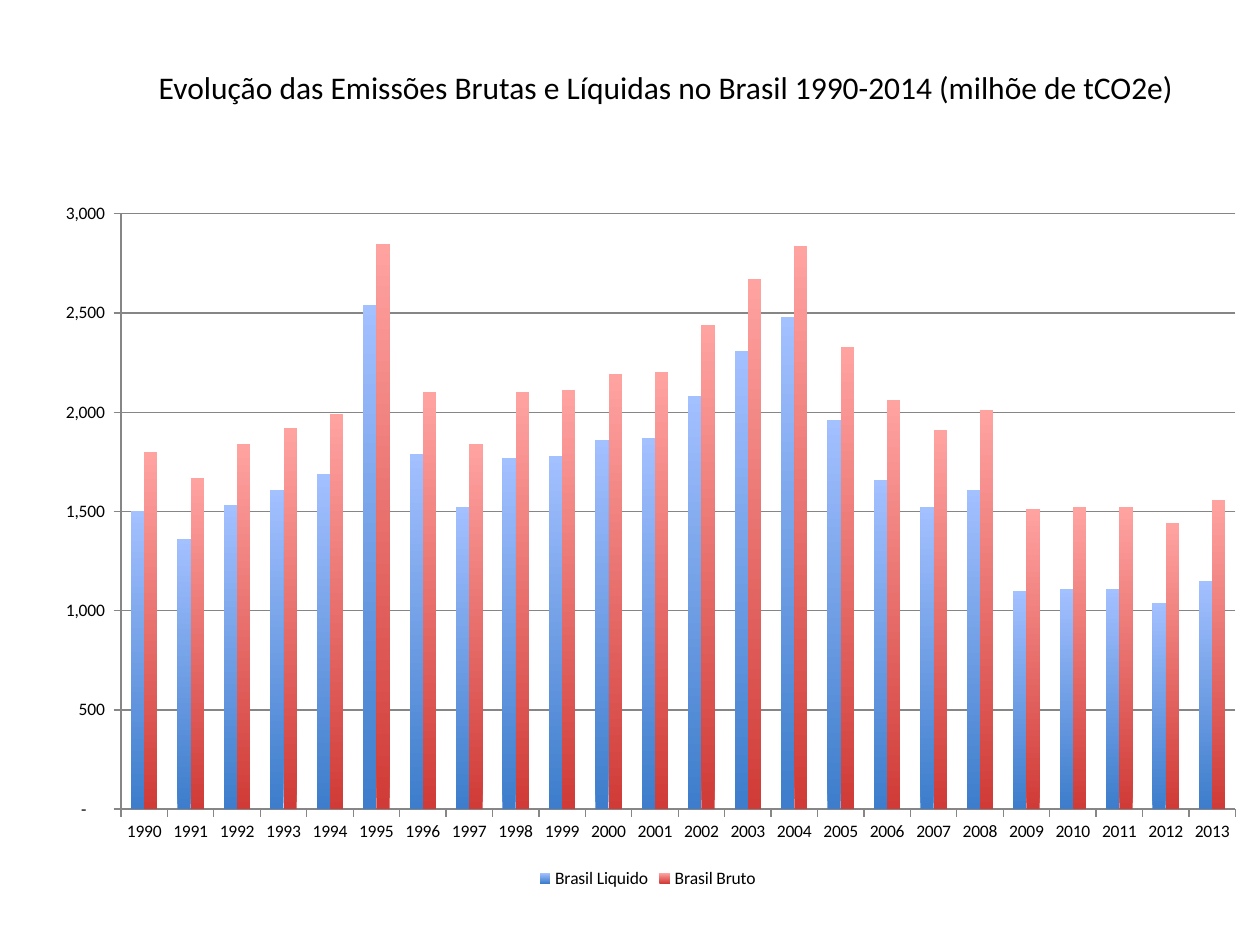
from lxml import etree
from pptx import Presentation
from pptx.chart.data import CategoryChartData
from pptx.dml.color import RGBColor
from pptx.enum.chart import XL_CHART_TYPE, XL_LEGEND_POSITION, XL_TICK_MARK
from pptx.enum.text import MSO_ANCHOR, MSO_AUTO_SIZE, PP_ALIGN
from pptx.util import Inches, Pt

COLUMN = XL_CHART_TYPE.COLUMN_CLUSTERED
BOTTOM = XL_LEGEND_POSITION.BOTTOM
OUTSIDE = XL_TICK_MARK.OUTSIDE
TOP = MSO_ANCHOR.TOP
LEFT = PP_ALIGN.LEFT
NO_FIT = MSO_AUTO_SIZE.NONE

THEME = {
    "font": "Calibri",
    "title": 18,
    "label": 10,
    "text": RGBColor.from_string("000000"),
    "grid": RGBColor.from_string("868686"),
    # Each bar fades from its foot to its top
    "fades": [("3D7DCB", "A3C0FF"), ("D03B37", "FFA3A1")],
}

YEARS = range(1990, 2014)
NET = [1500, 1360, 1530, 1610, 1690, 2540, 1790, 1520, 1770, 1780, 1860, 1870,
       2080, 2310, 2480, 1960, 1660, 1520, 1610, 1100, 1110, 1110, 1040, 1150]
GROSS = [1800, 1670, 1840, 1920, 1990, 2850, 2100, 1840, 2100, 2110, 2190, 2200,
         2440, 2670, 2840, 2330, 2060, 1910, 2010, 1510, 1520, 1520, 1440, 1560]


def style(font, size):
    font.name = THEME["font"]
    font.size = Pt(size)
    font.bold = False
    font.color.rgb = THEME["text"]


def write(frame, text, size, align=LEFT, anchor=TOP, wrap=False):
    frame.auto_size = NO_FIT
    frame.word_wrap = wrap
    frame.vertical_anchor = anchor
    para = frame.paragraphs[0]
    para.alignment = align
    run = para.add_run()
    run.text = text
    style(run.font, size)


deck = Presentation()
deck.slide_width, deck.slide_height = Inches(10), Inches(7.5)
slide = deck.slides.add_slide(deck.slide_layouts[5])

# Title
title = slide.shapes.title
title.left, title.top = Inches(1.16), Inches(0.49)
title.width, title.height = Inches(8.36), Inches(0.71)
write(title.text_frame,
      "Evolução das Emissões Brutas e Líquidas no Brasil 1990-2014 (milhõe de tCO2e)",
      THEME["title"])

# Chart
data = CategoryChartData(number_format="#,##0")
data.categories = [str(year) for year in YEARS]
data.add_series("Brasil Liquido", NET)
data.add_series("Brasil Bruto", GROSS)
chart = slide.shapes.add_chart(
    COLUMN, Inches(0.28), Inches(1.53), Inches(9.72), Inches(5.56), data).chart
style(chart.font, THEME["label"])
chart.has_title = False
chart.has_legend = True
chart.legend.position = BOTTOM
chart.legend.include_in_layout = False

# Bars
plot = chart.plots[0]
plot.gap_width = 150
plot.overlap = 0
plot.vary_by_categories = False
for bars, fade in zip(plot.series, THEME["fades"]):
    fill = bars.format.fill
    fill.gradient()
    fill.gradient_angle = 90
    for stop, color in zip(fill.gradient_stops, fade):
        stop.color.rgb = RGBColor.from_string(color)

# Axes and grid
scale = chart.value_axis
scale.minimum_scale, scale.maximum_scale, scale.major_unit = 0, 3000, 500
scale.has_major_gridlines = True
scale.tick_labels.number_format = '_-* #,##0_-;\\-* #,##0_-;_-* "-"??_-;_-@_'
scale.tick_labels.number_format_is_linked = False
for axis in (scale, chart.category_axis):
    axis.major_tick_mark = OUTSIDE
    style(axis.tick_labels.font, THEME["label"])
for part in (scale, chart.category_axis, scale.major_gridlines):
    part.format.line.color.rgb = THEME["grid"]
    part.format.line.width = Pt(0.75)

# Plot area, as shares of the chart frame
area = chart.category_axis.format.line  # keeps axis lines made before layout
space = chart.plots[0]._element.getparent()
for old in space.findall("{*}layout"):
    space.remove(old)
URI = etree.QName(space).namespace
layout = etree.Element(f"{{{URI}}}layout")
manual = etree.SubElement(layout, f"{{{URI}}}manualLayout")
for tag, value in [("layoutTarget", "inner"), ("xMode", "edge"), ("yMode", "edge"),
                   ("x", "0.07"), ("y", "0.03"), ("w", "0.91"), ("h", "0.85")]:
    etree.SubElement(manual, f"{{{URI}}}{tag}", val=value)
space.insert(0, layout)

deck.save("out.pptx")
